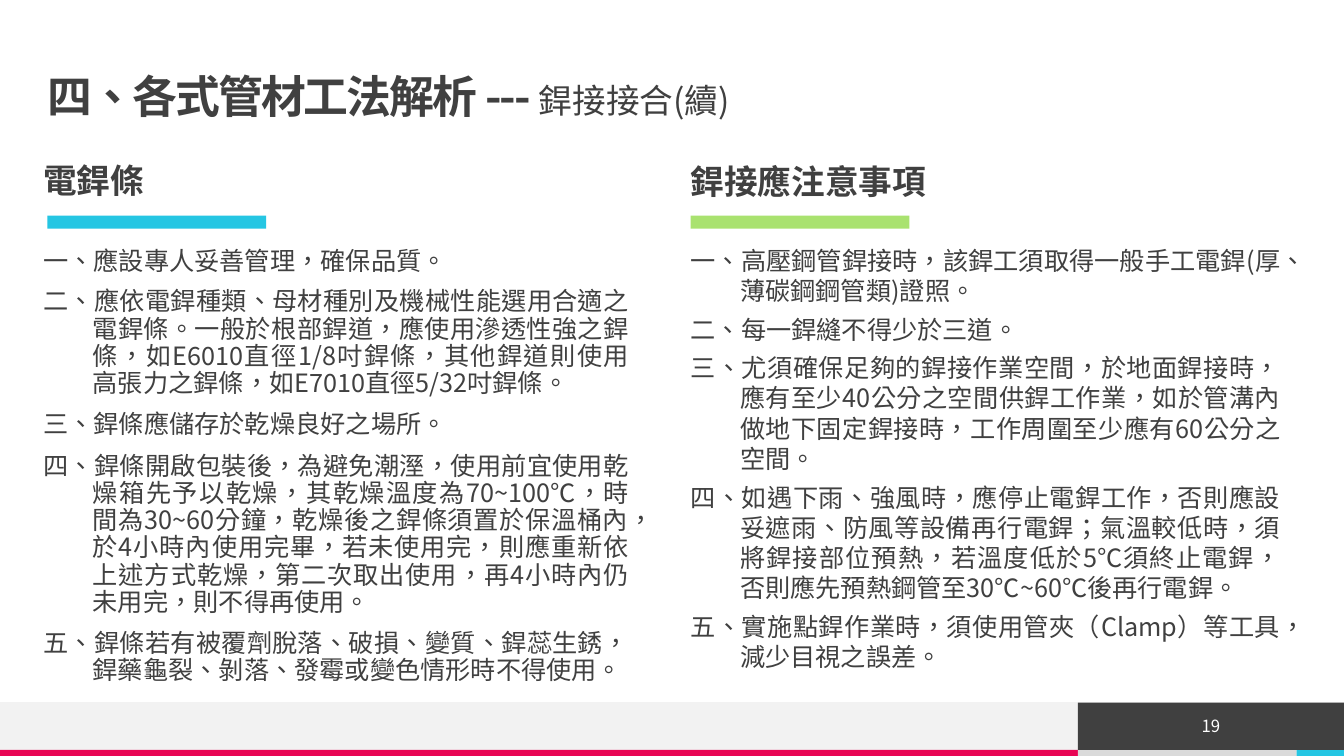
from lxml import etree
from pptx import Presentation
from pptx import util as u
from pptx.dml.color import RGBColor
from pptx.enum import shapes, text
from pptx.oxml import ns

FONT = "Noto Sans CJK TC"
DARK = "404040"
CYAN = "25C6E3"
GREEN = "A9E26F"
PINK = "E80554"
PALE = "F2F2F2"
SILVER = "DADADA"
WHITE = "FFFFFF"

ELECTRODE_RULES = [
    "一、應設專人妥善管理，確保品質。",
    "二、應依電銲種類、母材種別及機械性能選用合適之電銲條。一般於根部銲道，應使用滲透性強之銲條，如E6010直徑1/8吋銲條，其他銲道則使用高張力之銲條，如E7010直徑5/32吋銲條。",
    "三、銲條應儲存於乾燥良好之場所。",
    "四、銲條開啟包裝後，為避免潮溼，使用前宜使用乾燥箱先予以乾燥，其乾燥溫度為70~100℃，時間為30~60分鐘，乾燥後之銲條須置於保溫桶內，於4小時內使用完畢，若未使用完，則應重新依上述方式乾燥，第二次取出使用，再4小時內仍未用完，則不得再使用。",
    "五、銲條若有被覆劑脫落、破損、變質、銲蕊生銹，銲藥龜裂、剝落、發霉或變色情形時不得使用。",
]
WELDING_RULES = [
    "一、高壓鋼管銲接時，該銲工須取得一般手工電銲(厚、薄碳鋼鋼管類)證照。",
    "二、每一銲縫不得少於三道。",
    "三、尤須確保足夠的銲接作業空間，於地面銲接時，應有至少40公分之空間供銲工作業，如於管溝內做地下固定銲接時，工作周圍至少應有60公分之空間。",
    "四、如遇下雨、強風時，應停止電銲工作，否則應設妥遮雨、防風等設備再行電銲；氣溫較低時，須將銲接部位預熱，若溫度低於5℃須終止電銲，否則應先預熱鋼管至30℃~60℃後再行電銲。",
    "五、實施點銲作業時，須使用管夾（Clamp）等工具，減少目視之誤差。",
]


def color(value):
    return RGBColor.from_string(value)


def style_font(font, size, bold=False, fill=DARK):
    font.name = FONT
    font.size = u.Pt(size)
    font.bold = bold
    font.color.rgb = color(fill)
    font._rPr.set("lang", "zh-TW")
    east_asian = etree.SubElement(font._rPr, ns.qn("a:ea"))
    east_asian.set("typeface", FONT)


def place(shape, left, top, width, height):
    shape.left, shape.top = u.Inches(left), u.Inches(top)
    shape.width, shape.height = u.Inches(width), u.Inches(height)


def prepare_frame(shape, anchor):
    frame = shape.text_frame
    frame.word_wrap = True
    frame.auto_size = text.MSO_AUTO_SIZE.NONE
    frame.vertical_anchor = anchor
    frame.margin_left = frame.margin_right = 0
    frame.margin_top = frame.margin_bottom = 0
    return frame


def add_bar(slide, left, top, width, height, fill):
    bar = slide.shapes.add_shape(
        shapes.MSO_SHAPE.RECTANGLE,
        *(u.Inches(length) for length in (left, top, width, height)))
    bar.shadow.inherit = False
    bar.fill.solid()
    bar.fill.fore_color.rgb = color(fill)
    bar.line.fill.background()
    return bar


def add_title(slide, left, top, width, height):
    title = slide.shapes.title
    place(title, left, top, width, height)
    paragraph = prepare_frame(title, text.MSO_ANCHOR.MIDDLE).paragraphs[0]
    paragraph.alignment = text.PP_ALIGN.LEFT
    paragraph.line_spacing = 0.9
    for words, size, bold, spacing in (
            ("四、各式管材工法解析 --- ", 32, True, -150),
            ("銲接接合(續)", 24, False, 0)):
        run = paragraph.add_run()
        run.text = words
        style_font(run.font, size, bold)
        run.font._rPr.set("spc", str(spacing))


def fill_heading(placeholder, words):
    frame = prepare_frame(placeholder, text.MSO_ANCHOR.TOP)
    frame.text = words
    paragraph = frame.paragraphs[0]
    paragraph.alignment = text.PP_ALIGN.LEFT
    paragraph.line_spacing = 1.0
    style_font(paragraph.font, 24, True)


def fill_rules(placeholder, rules, line_spacing, space_before):
    frame = prepare_frame(placeholder, text.MSO_ANCHOR.TOP)
    frame.text = "\n".join(rules)
    for index, paragraph in enumerate(frame.paragraphs):
        properties = paragraph._p.get_or_add_pPr()
        properties.set("marL", str(u.Inches(0.49)))
        properties.set("indent", str(u.Inches(-0.49)))
        etree.SubElement(properties, ns.qn("a:buNone"))
        paragraph.alignment = text.PP_ALIGN.JUSTIFY
        paragraph.line_spacing = line_spacing if index else 1.0
        paragraph.space_before = u.Pt(space_before if index else 6)
        style_font(paragraph.font, 18)


def add_column(slide, box, indexes, heading, rules, accent, bar_left,
               line_spacing, space_before):
    left, top, width, height = box
    title, body = (slide.placeholders[index] for index in indexes)
    place(title, left, top, width, 0.39)
    fill_heading(title, heading)
    bar_top = 2.14
    add_bar(slide, bar_left, bar_top, 2.17, 0.13, accent)
    body_top = bar_top + 0.29
    place(body, left, body_top, width, top + height - body_top)
    fill_rules(body, rules, line_spacing, space_before)


def add_footer(slide, left, top, width, height):
    strip = 0.06
    band = height - strip
    number_left = left + 10.69
    corner_left = left + 12.86
    right = left + width
    for bar_left, bar_right, bar_top, bar_height, fill in (
            (left, number_left, top, band, PALE),
            (left, number_left, top + band, strip, PINK),
            (number_left, corner_left, top + band, strip, SILVER),
            (corner_left, right, top + band, strip, CYAN)):
        add_bar(slide, bar_left, bar_top, bar_right - bar_left, bar_height, fill)
    rule = slide.shapes.add_connector(
        shapes.MSO_CONNECTOR.STRAIGHT,
        u.Inches(right), u.Inches(top), u.Inches(left), u.Inches(top))
    rule.line.color.rgb = color(PALE)
    rule.line.width = u.Pt(0.5)
    etree.SubElement(rule._element.spPr, ns.qn("a:effectLst"))
    number = add_bar(slide, number_left, top, right - number_left, band, DARK)
    frame = prepare_frame(number, text.MSO_ANCHOR.MIDDLE)
    frame.text = "19"
    frame.paragraphs[0].alignment = text.PP_ALIGN.CENTER
    style_font(frame.paragraphs[0].font, 12, fill=WHITE)


def main():
    presentation = Presentation()
    presentation.slide_width = u.Inches(13.33)
    presentation.slide_height = u.Inches(7.5)
    slide = presentation.slides.add_slide(presentation.slide_layouts[4])
    add_footer(slide, 0, 6.97, 13.33, 0.53)
    add_title(slide, 0.47, 0.53, 12.4, 0.9)
    add_column(slide, (0.43, 1.59, 5.81, 5.26), (1, 2), "電銲條",
               ELECTRODE_RULES, CYAN, 0.47, 0.9, 10)
    add_column(slide, (6.85, 1.6, 5.85, 5.13), (3, 4), "銲接應注意事項",
               WELDING_RULES, GREEN, 6.85, 1.0, 6)
    presentation.save("out.pptx")


if __name__ == "__main__":
    main()
